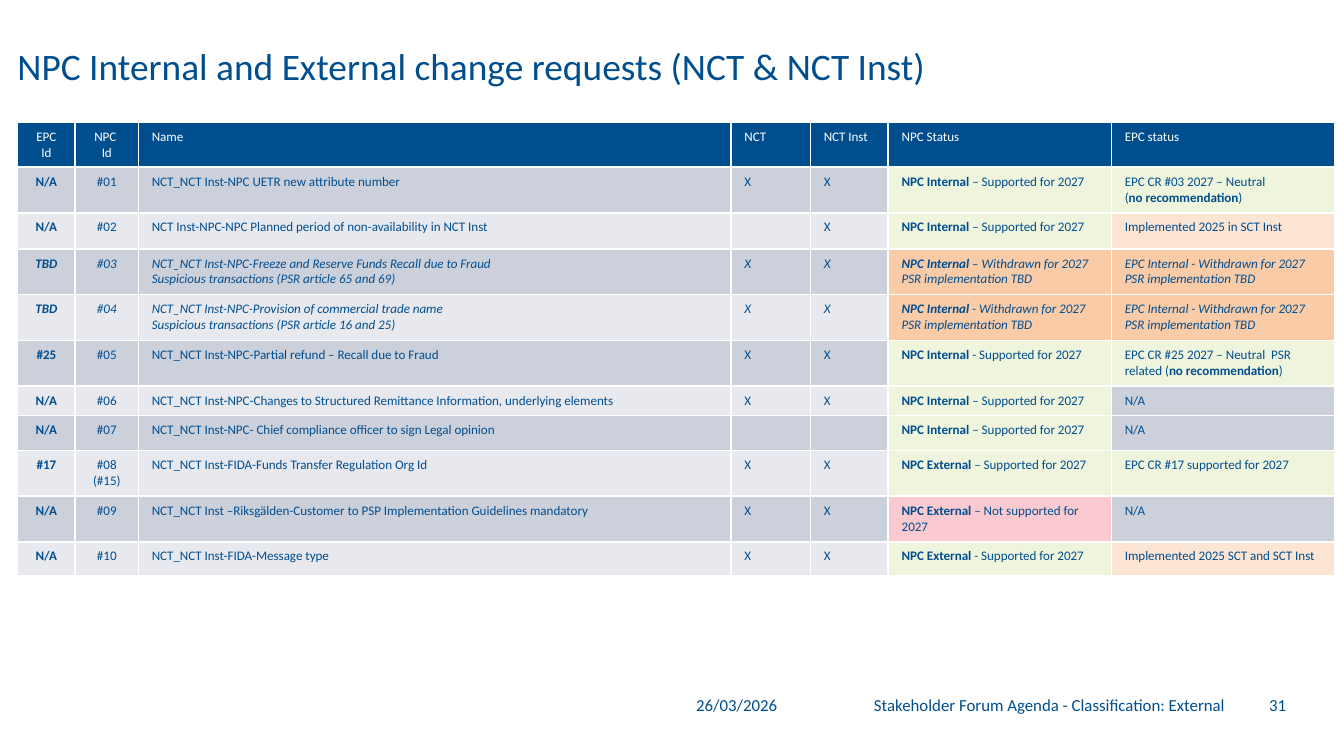
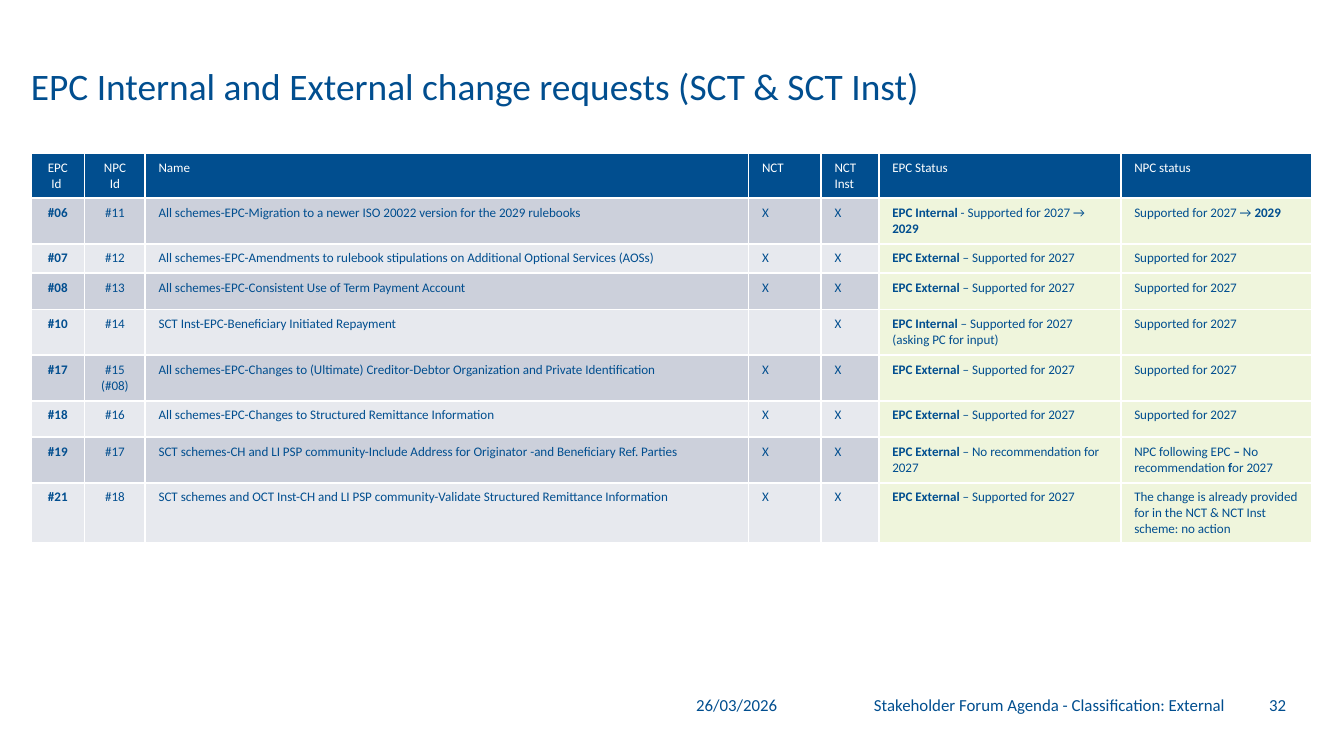
from pptx import Presentation
from pptx import util as u
from pptx.dml.color import RGBColor
from pptx.enum import text

FONT = "Calibri"
SLIDE_WIDTH = u.Inches(10)
SLIDE_HEIGHT = SLIDE_WIDTH * 9 // 16
COLORS = {
    "navy": "014E8F", "white": "FFFFFF",
    "band_dark": "CCD0DB", "band_light": "E7E9EE",
    "supported": "EFF5DC", "implemented": "FCE5D3",
    "withdrawn": "F9CBA7", "rejected": "FBC9D0", "not_applicable": "CBD0DB",
}
CENTERED_COLUMNS = (0, 1)
STATUS_COLUMNS = (5, 6)

# Text between ** marks is bold; a line break starts a new paragraph.
WITHDRAWN = "Withdrawn for 2027\nPSR implementation TBD"
NPC_INTERNAL = "**NPC Internal **– Supported for 2027"
EPC_EXTERNAL = "**EPC External **– Supported for 2027"
SUPPORTED = "Supported for 2027"

NPC_SLIDE = {
    "title": "NPC Internal and External change requests (NCT & NCT Inst)",
    "title_box": (0.13, 0.32, 9.15, 0.37),
    "number": "31",
    "table_at": (0.13, 0.91),
    "columns": (0.43, 0.47, 4.41, 0.59, 0.58, 1.66, 1.66),
    "heights": (0.33, 0.34, 0.27, 0.34, 0.34, 0.34, 0.22, 0.26, 0.34, 0.34, 0.25),
    "header": ("EPC Id", "NPC \nId", "Name", "NCT", "NCT Inst",
               "NPC Status", "EPC status"),
    "rows": [
        ("N/A", "#01", "NCT_NCT Inst-NPC UETR new attribute number", "X", "X",
         NPC_INTERNAL, "EPC CR #03 2027 – Neutral\n(**no recommendation**)"),
        ("N/A", "#02",
         "NCT Inst-NPC-NPC Planned period of non-availability in NCT Inst",
         "", "X", NPC_INTERNAL, "Implemented 2025 in SCT Inst"),
        ("TBD", "#03",
         "NCT_NCT Inst-NPC-Freeze and Reserve Funds Recall due to Fraud\n"
         "Suspicious transactions (PSR article 65 and 69)", "X", "X",
         "**NPC Internal **– " + WITHDRAWN, "EPC Internal - " + WITHDRAWN),
        ("TBD", "#04",
         "NCT_NCT Inst-NPC-Provision of commercial trade name\n"
         "Suspicious transactions (PSR article 16 and 25)", "X", "X",
         "**NPC Internal **- " + WITHDRAWN, "EPC Internal - " + WITHDRAWN),
        ("#25", "#05", "NCT_NCT Inst-NPC-Partial refund – Recall due to Fraud",
         "X", "X", "**NPC Internal **- Supported for 2027",
         "EPC CR #25 2027 – Neutral  PSR related (**no recommendation**)"),
        ("N/A", "#06",
         "NCT_NCT Inst-NPC-Changes to Structured Remittance Information, "
         "underlying elements", "X", "X", NPC_INTERNAL, "N/A"),
        ("N/A", "#07",
         "NCT_NCT Inst-NPC- Chief compliance officer to sign Legal opinion",
         "", "", NPC_INTERNAL, "N/A"),
        ("#17", "#08\n(#15)", "NCT_NCT Inst-FIDA-Funds Transfer Regulation Org Id",
         "X", "X", "**NPC External **– Supported for 2027",
         "EPC CR #17 supported for 2027"),
        ("N/A", "#09",
         "NCT_NCT Inst –Riksgälden-Customer to PSP Implementation Guidelines "
         "mandatory", "X", "X", "**NPC External **– Not supported for 2027", "N/A"),
        ("N/A", "#10", "NCT_NCT Inst-FIDA-Message type", "X", "X",
         "**NPC External **- Supported for 2027",
         "Implemented 2025 SCT and SCT Inst"),
    ],
}

EPC_SLIDE = {
    "title": "EPC Internal and External change requests (SCT & SCT Inst)",
    "title_box": (0.23, 0.47, 9.15, 0.39),
    "number": "32",
    "table_at": (0.23, 1.14),
    "columns": (0.4, 0.45, 4.49, 0.54, 0.43, 1.8, 1.42),
    "heights": (0.33, 0.34, 0.22, 0.27, 0.34, 0.34, 0.27, 0.34, 0.45),
    "header": ("EPC Id ", "NPC Id", "Name", "NCT", "NCT Inst",
               "EPC Status", "NPC status"),
    "rows": [
        ("#06", "#11",
         "All schemes-EPC-Migration to a newer ISO 20022 version for the 2029 "
         "rulebooks", "X", "X",
         "**EPC Internal **- Supported for 2027 → **2029**",
         "Supported for 2027 → **2029**"),
        ("#07", "#12",
         "All schemes-EPC-Amendments to rulebook stipulations on Additional "
         "Optional Services (AOSs)", "X", "X", EPC_EXTERNAL, SUPPORTED),
        ("#08", "#13", "All schemes-EPC-Consistent Use of Term Payment Account",
         "X", "X", EPC_EXTERNAL, SUPPORTED),
        ("#10", "#14", "SCT Inst-EPC-Beneficiary Initiated Repayment", "", "X",
         "**EPC Internal **– Supported for 2027\n(asking PC for input)", SUPPORTED),
        ("#17", "#15\n(#08)",
         "All schemes-EPC-Changes to (Ultimate) Creditor-Debtor Organization "
         "and Private Identification", "X", "X", EPC_EXTERNAL, SUPPORTED),
        ("#18", "#16",
         "All schemes-EPC-Changes to Structured Remittance Information",
         "X", "X", EPC_EXTERNAL, SUPPORTED),
        ("#19", "#17",
         "SCT schemes-CH and LI PSP community-Include Address for Originator "
         "-and Beneficiary Ref. Parties", "X", "X",
         "**EPC External **– No recommendation for 2027",
         "NPC following EPC **– **No recommendation** f**or 2027"),
        ("#21", "#18",
         "SCT schemes and OCT Inst-CH and LI PSP community-Validate Structured "
         "Remittance Information", "X", "X", EPC_EXTERNAL,
         "The change is already provided for in the NCT & NCT Inst scheme: "
         "no action"),
    ],
}


def rgb(name):
    return RGBColor.from_string(COLORS[name])


def write(frame, words, size, color="navy", italic=False, align="LEFT"):
    """Fill a text frame from marked-up words."""
    frame.word_wrap = True
    for index, line in enumerate(words.split("\n")):
        para = frame.add_paragraph() if index else frame.paragraphs[0]
        para.alignment = getattr(text.PP_ALIGN, align)
        for part, piece in enumerate(line.split("**")):
            if piece:
                span = para.add_run()
                span.text = piece
                span.font.name, span.font.size = FONT, u.Pt(size)
                span.font.bold, span.font.italic = part % 2 == 1, italic
                span.font.color.rgb = rgb(color)
        if not line:  # keeps an empty cell as low as its row
            para._p.get_or_add_endParaRPr().set("sz", str(size * 100))


def add_label(page, words, box, size, anchor="TOP", inset=0, **style):
    frame = page.shapes.add_textbox(*map(u.Inches, box)).text_frame
    frame.margin_left = u.Inches(inset)
    frame.margin_top = frame.margin_right = frame.margin_bottom = 0
    frame.vertical_anchor = getattr(text.MSO_ANCHOR, anchor)
    write(frame, words, size, **style)


def add_footer(page, number):
    style = {"size": 9, "anchor": "BOTTOM"}
    add_label(page, "Stakeholder Forum Agenda - Classification: External",
              (6.37, 4.9, 2.74, 0.42), align="RIGHT", **style)
    add_label(page, "26/03/2026", (5.18, 4.91, 1.11, 0.41), **style)
    add_label(page, number, (9.17, 4.89, 0.4, 0.43), align="RIGHT",
              inset=0.03, **style)


def status_fill(words):
    if words == "N/A":
        return "not_applicable"
    for phrase, fill in (("Withdrawn", "withdrawn"), ("Not supported", "rejected"),
                         ("Implemented", "implemented")):
        if phrase in words:
            return fill
    return "supported"


def add_requests_table(page, at, columns, heights, header, rows):
    """The default table style supplies the white cell lines."""
    left, top = at
    box = (left, top, sum(columns), sum(heights))
    table = page.shapes.add_table(len(heights), len(columns),
                                  *map(u.Inches, box)).table
    for column, width in zip(table.columns, columns):
        column.width = u.Inches(width)

    for index, values in enumerate([header, *rows]):
        table.rows[index].height = u.Inches(heights[index])
        is_header = index == 0
        band = "band_dark" if index % 2 else "band_light"
        for position, words in enumerate(values):
            cell = table.cell(index, position)
            fill = "navy" if is_header else band
            if not is_header and position in STATUS_COLUMNS:
                fill = status_fill(words)
            if not is_header and position == 0:
                words = f"**{words}**"
            cell.fill.solid()
            cell.fill.fore_color.rgb = rgb(fill)
            write(cell.text_frame, words, 7,
                  color="white" if is_header else "navy",
                  italic=values[0] == "TBD",
                  align="CENTER" if position in CENTERED_COLUMNS else "LEFT")


def build_slide(deck, content):
    page = deck.slides.add_slide(deck.slide_layouts[6])
    add_label(page, content["title"], content["title_box"], 20)
    add_footer(page, content["number"])
    add_requests_table(page, content["table_at"], content["columns"],
                       content["heights"], content["header"], content["rows"])


def main():
    deck = Presentation()
    deck.slide_width, deck.slide_height = SLIDE_WIDTH, SLIDE_HEIGHT
    for content in (NPC_SLIDE, EPC_SLIDE):
        build_slide(deck, content)
    deck.save("out.pptx")


if __name__ == "__main__":
    main()
